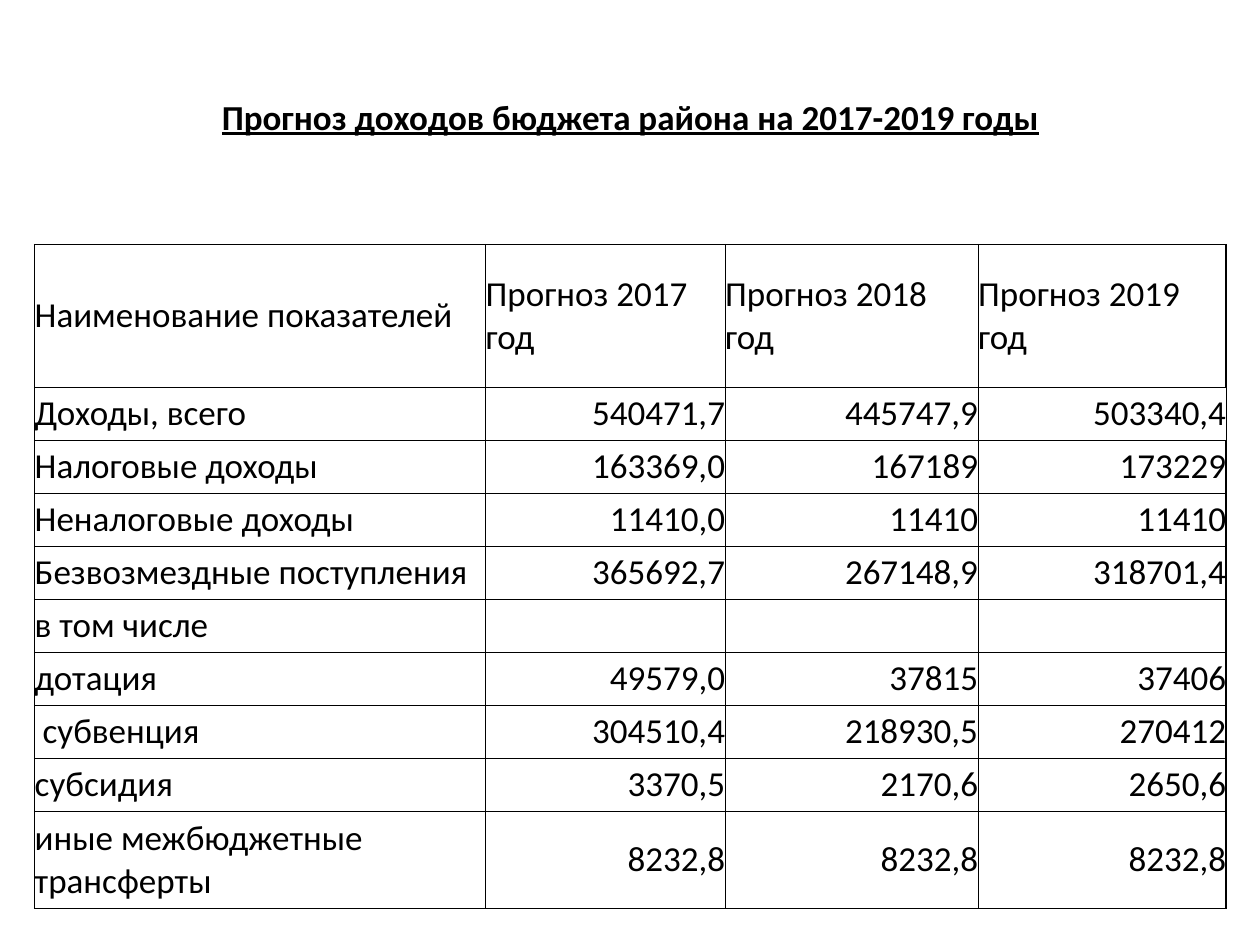
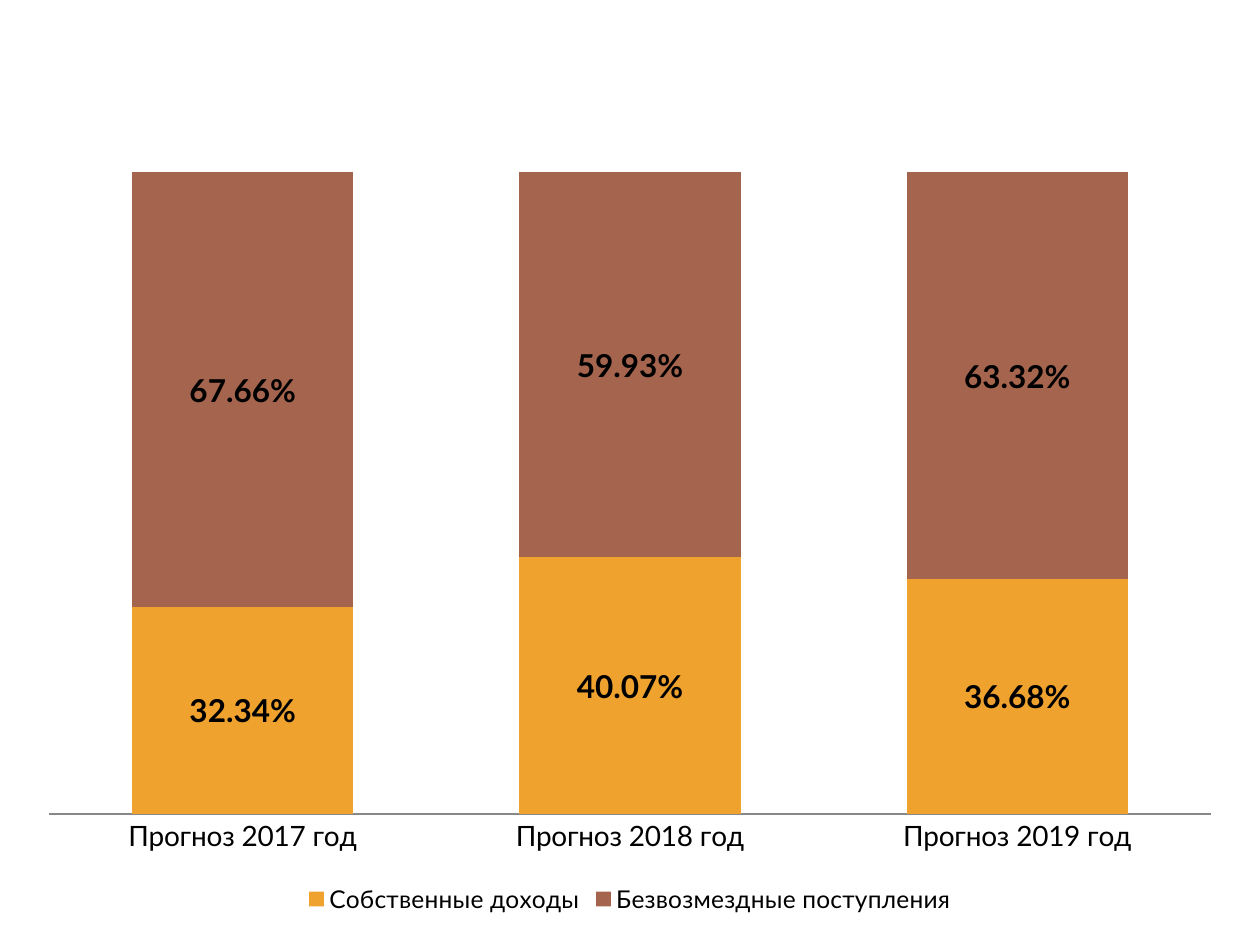
"""Build two slides on the district budget revenue forecast for 2017-2019."""
from lxml import etree
from pptx import Presentation
from pptx import util as u
from pptx.chart import data as chart_data
from pptx.dml.color import RGBColor
from pptx.enum import chart as charts, text
from pptx.oxml import ns

BLACK = RGBColor(0x00, 0x00, 0x00)
AXIS_GREY = RGBColor(0x88, 0x88, 0x88)
ORANGE = RGBColor(0xF0, 0xA2, 0x2E)
BROWN = RGBColor(0xA5, 0x64, 0x4E)
TABLE_FONT = "Calibri"
CHART_FONT = "Lato"
PERCENT = "0.00%"
THIN, THICK = 0.5, 1

TITLE = "Прогноз доходов бюджета района на 2017-2019 годы"
YEARS = [f"Прогноз {year} год" for year in (2017, 2018, 2019)]
ROWS = [
    [TITLE, "", "", ""],
    ["", "", "", ""],
    ["Наименование показателей", *YEARS],
    ["Доходы, всего", "540471,7", "445747,9", "503340,4"],
    ["Налоговые доходы", "163369,0", "167189", "173229"],
    ["Неналоговые доходы", "11410,0", "11410", "11410"],
    ["Безвозмездные поступления", "365692,7", "267148,9", "318701,4"],
    ["в том числе", "", "", ""],
    ["дотация", "49579,0", "37815", "37406"],
    [" субвенция", "304510,4", "218930,5", "270412"],
    ["субсидия", "3370,5", "2170,6", "2650,6"],
    ["иные межбюджетные трансферты", "8232,8", "8232,8", "8232,8"],
]
COLUMN_WIDTHS = [9.09, 4.83, 5.1, 5]
ROW_HEIGHTS = [2.95, 1.07, 2.87] + [1.07] * 8 + [1.95]
TITLE_ROW, GAP_ROW, HEADER_ROW, TOTAL_ROW = range(4)
LAST_ROW, LAST_COLUMN = len(ROWS) - 1, len(COLUMN_WIDTHS) - 1


def set_borders(cell, widths):
    """Draw the left, right, top and bottom borders; width 0 means no line."""
    properties = cell._tc.get_or_add_tcPr()
    for side, width in zip("LRTB", widths):
        line = etree.SubElement(properties, ns.qn(f"a:ln{side}"), w=str(u.Pt(width)))
        if width:
            fill = etree.SubElement(line, ns.qn("a:solidFill"))
            etree.SubElement(fill, ns.qn("a:srgbClr"), val=str(BLACK))
        else:
            etree.SubElement(line, ns.qn("a:noFill"))


presentation = Presentation()
presentation.slide_width = u.Cm(25.4)
presentation.slide_height = u.Cm(19.05)
blank_layout = presentation.slide_layouts[6]

table_slide = presentation.slides.add_slide(blank_layout)
table = table_slide.shapes.add_table(
    len(ROWS), len(COLUMN_WIDTHS), u.Cm(0.7), u.Cm(0.91),
    u.Cm(sum(COLUMN_WIDTHS)), u.Cm(sum(ROW_HEIGHTS))).table
table.first_row = False
table.horz_banding = False
for column, width in zip(table.columns, COLUMN_WIDTHS):
    column.width = u.Cm(width)
for row, height in zip(table.rows, ROW_HEIGHTS):
    row.height = u.Cm(height)

for row_index, row_texts in enumerate(ROWS):
    for column_index, cell_text in enumerate(row_texts):
        cell = table.cell(row_index, column_index)
        cell.text = cell_text
        cell.vertical_anchor = text.MSO_ANCHOR.MIDDLE
        cell.margin_left = cell.margin_right = cell.margin_top = cell.margin_bottom = 0
        paragraph = cell.text_frame.paragraphs[0]
        paragraph.font.name = TABLE_FONT
        paragraph.font.size = u.Pt(20)
        paragraph.font.color.rgb = BLACK
        if row_index == TITLE_ROW:
            paragraph.alignment = text.PP_ALIGN.CENTER
            paragraph.font.bold = True
            paragraph.font.underline = True
        elif row_index > HEADER_ROW and column_index > 0:
            paragraph.alignment = text.PP_ALIGN.RIGHT

        if row_index < HEADER_ROW:
            borders = [0, 0, 0, THICK if row_index == GAP_ROW else 0]
        else:
            thick_right = column_index == LAST_COLUMN and row_index != TOTAL_ROW
            thick_sides = [column_index == 0, thick_right,
                           row_index == HEADER_ROW, row_index == LAST_ROW]
            borders = [THICK if thick else THIN for thick in thick_sides]
        set_borders(cell, borders)
        cell.fill.background()
table.cell(TITLE_ROW, 0).merge(table.cell(TITLE_ROW, LAST_COLUMN))

chart_slide = presentation.slides.add_slide(blank_layout)
shares = chart_data.CategoryChartData(number_format=PERCENT)
shares.categories = YEARS
shares.add_series("Собственные доходы", [0.3234, 0.4007, 0.3668])
shares.add_series("Безвозмездные поступления", [0.6766, 0.5993, 0.6332])
chart = chart_slide.shapes.add_chart(
    charts.XL_CHART_TYPE.COLUMN_STACKED, u.Cm(0.5), u.Cm(0.53),
    u.Cm(24.4), u.Cm(18), shares).chart
chart.has_title = False
chart.font.name = CHART_FONT
chart.font.size = u.Pt(10)
chart.font.color.rgb = BLACK

chart.has_legend = True
chart.legend.position = charts.XL_LEGEND_POSITION.BOTTOM
chart.legend.include_in_layout = False
chart.legend.font.size = u.Pt(14)

category_axis = chart.category_axis
category_axis.major_tick_mark = charts.XL_TICK_MARK.NONE
category_axis.tick_labels.font.size = u.Pt(16)
category_axis.format.line.color.rgb = AXIS_GREY
value_axis = chart.value_axis
value_axis.visible = False
value_axis.has_major_gridlines = False
value_axis.minimum_scale = 0
value_axis.maximum_scale = 1.2
value_axis.tick_labels.number_format = PERCENT
value_axis.tick_labels.number_format_is_linked = False

plot = chart.plots[0]
plot.gap_width = 75
plot.overlap = 100
plot.vary_by_categories = False
for series, colour in zip(plot.series, (ORANGE, BROWN)):
    series.format.fill.solid()
    series.format.fill.fore_color.rgb = colour
    labels = series.data_labels
    labels.show_value = True
    labels.number_format = PERCENT
    labels.number_format_is_linked = False
    labels.font.size = u.Pt(18)
    labels.font.bold = True

presentation.save("out.pptx")
